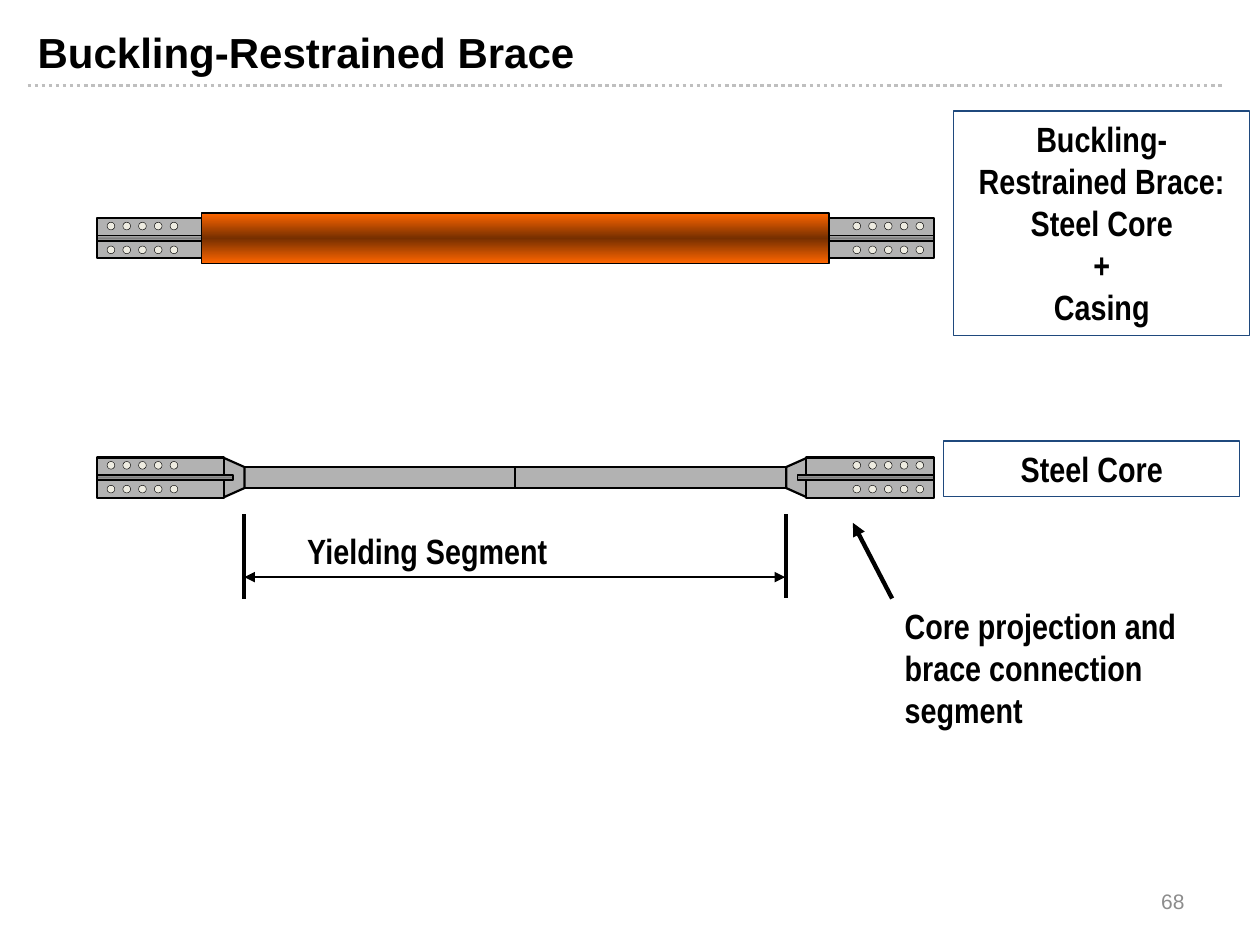
from copy import deepcopy
from dataclasses import dataclass
from typing import Any

from lxml.etree import SubElement as Sub
from pptx import Presentation
from pptx.dml.color import RGBColor as Rgb
from pptx.enum.dml import MSO_LINE as Dash
from pptx.enum.shapes import MSO_CONNECTOR as Conn, MSO_SHAPE as Kind
from pptx.enum.text import MSO_ANCHOR as Anchor, MSO_AUTO_SIZE as Auto, PP_ALIGN as Align
from pptx.oxml.ns import qn
from pptx.util import Pt

HEX = {
    "ink": "000000", "steel": "B2B2B2", "fin": "7F7F7F", "hole": "EEECE1",
    "case": "FF6600", "shade": "762F00", "frame": "1F497D",
    "rule": "BFBFBF", "page": "8C8C8C",
}
MID = 294.5


@dataclass
class Part:
    x: float
    y: float
    w: float
    h: float
    fill: tuple[str, ...]
    line: float
    kind: Any = Kind.RECTANGLE


@dataclass
class Label:
    x: float
    y: float
    w: float
    h: float
    rows: tuple[str, ...]
    size: float = 20
    font: str = "Arial Narrow"
    bold: bool = True
    hue: str = "ink"
    align: Any = Align.LEFT
    anchor: Any = Anchor.TOP
    frame: bool = False
    grow: bool = True


@dataclass
class Line:
    x: float
    y: float
    to_x: float
    to_y: float
    width: float
    hue: str = "ink"
    dash: Any = None
    tips: tuple[str, ...] = ()


CORE = Part(139, -6, 155.5, 12, ("steel",), 1.25)
PLATE = Part(55.4, -11.5, 72.8, 23, ("steel",), 1.25)
FIN = Part(55.4, -1.5, 77.8, 3, ("steel", "fin", "steel"), 0.75)
HOLES = [
    Part(61.2 + 9 * col, y, 4.4, 4.4, ("hole",), 0.25, Kind.OVAL)
    for y in (-9.2, 4.4) for col in range(5)
]
CASING = Part(115.2, -14.4, 358.6, 28.8, ("case", "shade", "case"), 1)
TAPER = ((127.4, 11.5), (139.7, 6), (139.7, -6), (127.4, -11.5))

LABELS = [
    Label(545, 63.4, 169.2, 128.2,
          ("Buckling- Restrained Brace:", "Steel Core", "+", "Casing"),
          align=Align.CENTER, frame=True),
    Label(539.3, 252, 169.2, 31.7, ("Steel Core",), align=Align.CENTER, frame=True),
    Label(168.5, 298.8, 244.8, 31, ("Yielding Segment",)),
    Label(509.8, 342, 203, 79.2, ("Core projection and brace connection segment",)),
    Label(14.4, 11.5, 646.6, 31.7, ("Buckling-Restrained Brace",), 24, "Arial", grow=False),
    Label(516.2, 500.4, 167.8, 28.8, ("68",), 12, "Arial", False, "page",
          Align.RIGHT, Anchor.MIDDLE, grow=False),
]
LINES = [
    Line(139.7, 293.8, 139.7, 342, 2.25),
    Line(449.3, 293.8, 449.3, 341.5, 2.25),
    Line(139.7, 329.8, 448.6, 329.8, 1.5, tips=("headEnd", "tailEnd")),
    Line(487.4, 298.8, 509.8, 342, 2.5, tips=("headEnd",)),
]


def tone(name: str) -> Rgb:
    """Look up a named colour."""
    return Rgb.from_string(HEX[name])


def paint(shape: Any, fill: tuple[str, ...], width: float, hue: str = "ink") -> None:
    """Fill a shape plainly or with a vertical gradient, and outline it."""
    shape.shadow.inherit = False
    shape.line.color.rgb = tone(hue)
    shape.line.width = Pt(width)
    if not fill:
        shape.fill.background()
    elif len(fill) == 1:
        shape.fill.solid()
        shape.fill.fore_color.rgb = tone(fill[0])
    else:
        shape.fill.gradient()
        shape.fill.gradient_angle = 90
        stops = shape._element.spPr.find(qn("a:gradFill")).find(qn("a:gsLst"))
        stops.insert(1, deepcopy(stops[0]))
        for rank, (stop, name) in enumerate(zip(shape.fill.gradient_stops, fill)):
            stop.position = rank / 2
            stop.color.rgb = tone(name)


def draw_part(shapes: Any, part: Part, axis: float, flip: bool = False) -> None:
    """Draw a part about a brace axis, mirrored about the centre if asked."""
    x = 2 * MID - part.x - part.w if flip else part.x
    shape = shapes.add_shape(part.kind, Pt(x), Pt(axis + part.y), Pt(part.w), Pt(part.h))
    paint(shape, part.fill, part.line)


def draw_core(shapes: Any, axis: float) -> None:
    """Draw both mirrored halves of a steel core."""
    for flip in (False, True):
        draw_part(shapes, CORE, axis, flip)
        dots = [(Pt(2 * MID - x if flip else x), Pt(axis + y)) for x, y in TAPER]
        pen = shapes.build_freeform(*dots[0])
        pen.add_line_segments(dots[1:], close=True)
        paint(pen.convert_to_shape(), ("steel",), 1.25)
        for part in (PLATE, FIN, *HOLES):
            draw_part(shapes, part, axis, flip)


def draw_line(shapes: Any, line: Line) -> None:
    """Draw a straight line with optional dash and arrowheads."""
    ends = (Pt(v) for v in (line.x, line.y, line.to_x, line.to_y))
    link = shapes.add_connector(Conn.STRAIGHT, *ends)
    link.line.color.rgb = tone(line.hue)
    link.line.width = Pt(line.width)
    if line.dash:
        link.line.dash_style = line.dash
    props = link._element.spPr
    for tip in line.tips:
        Sub(props.find(qn("a:ln")), qn(f"a:{tip}"), type="triangle")
    Sub(props, qn("a:effectLst"))


def draw_label(shapes: Any, label: Label) -> None:
    """Draw a label as a framed rectangle or a text box."""
    area = [Pt(v) for v in (label.x, label.y, label.w, label.h)]
    if label.frame:
        shape = shapes.add_shape(Kind.RECTANGLE, *area)
        paint(shape, (), 0.75, "frame")
    else:
        shape = shapes.add_textbox(*area)
    frame = shape.text_frame
    frame.word_wrap = True
    frame.auto_size = Auto.SHAPE_TO_FIT_TEXT if label.grow else Auto.NONE
    frame.vertical_anchor = label.anchor
    para = frame.paragraphs[0]
    para.alignment = label.align
    para.font.size = Pt(label.size)
    for rank, row in enumerate(label.rows):
        if rank:
            para.add_line_break()
        run = para.add_run()
        run.text = row
        run.font.name = label.font
        run.font.size = Pt(label.size)
        run.font.bold = label.bold
        run.font.color.rgb = tone(label.hue)


def main() -> None:
    """Build the brace slide."""
    deck = Presentation()
    deck.slide_width, deck.slide_height = Pt(720), Pt(540)
    shapes = deck.slides.add_slide(deck.slide_layouts[6]).shapes
    draw_line(shapes, Line(15.8, 49, 699.8, 49, 2, "rule", Dash.ROUND_DOT))
    draw_core(shapes.add_group_shape().shapes, 272.9)
    brace = shapes.add_group_shape().shapes
    draw_core(brace, 136.2)
    draw_part(brace, CASING, 136.2)
    for line in LINES:
        draw_line(shapes, line)
    for label in LABELS:
        draw_label(shapes, label)
    deck.save("out.pptx")


if __name__ == "__main__":
    main()
